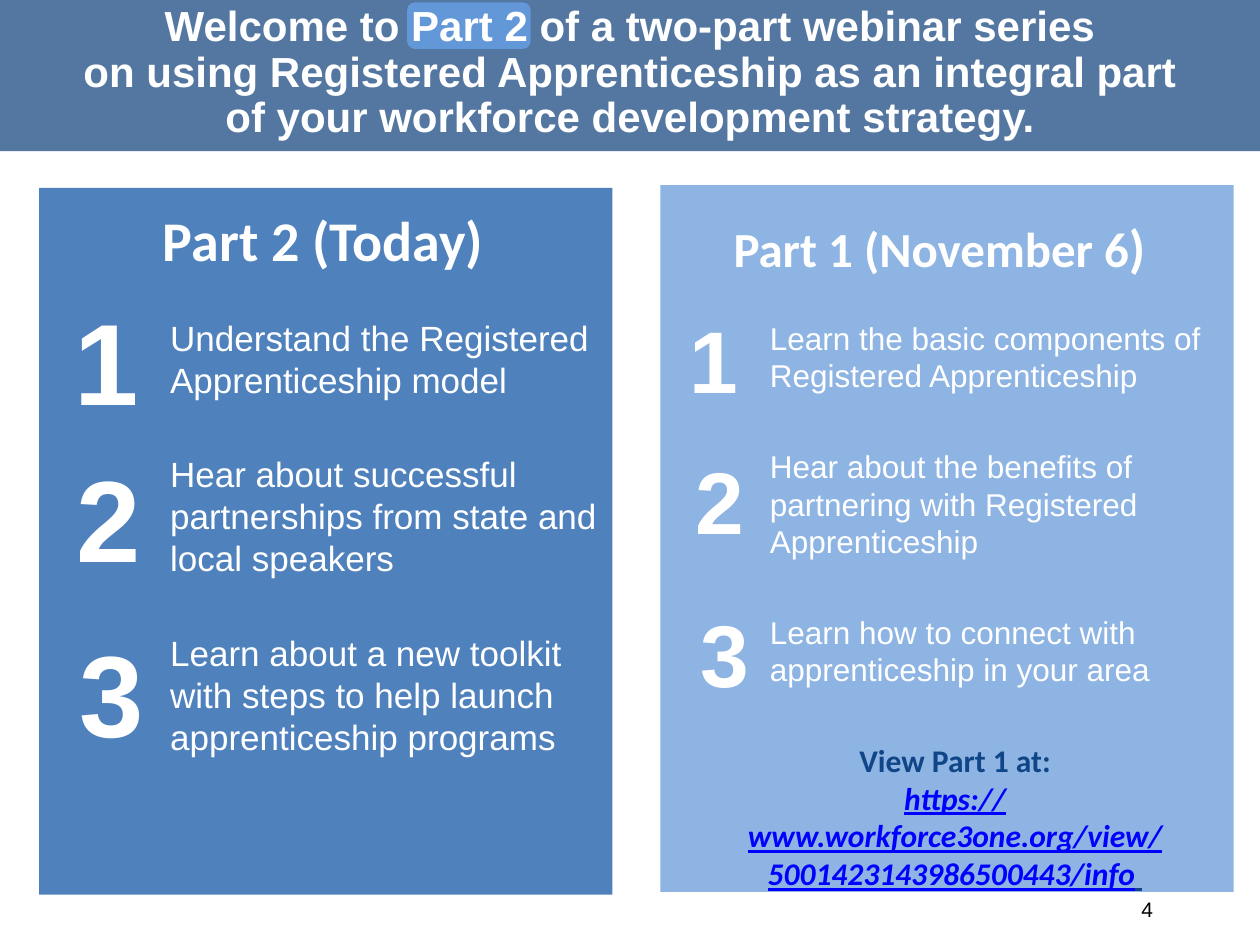
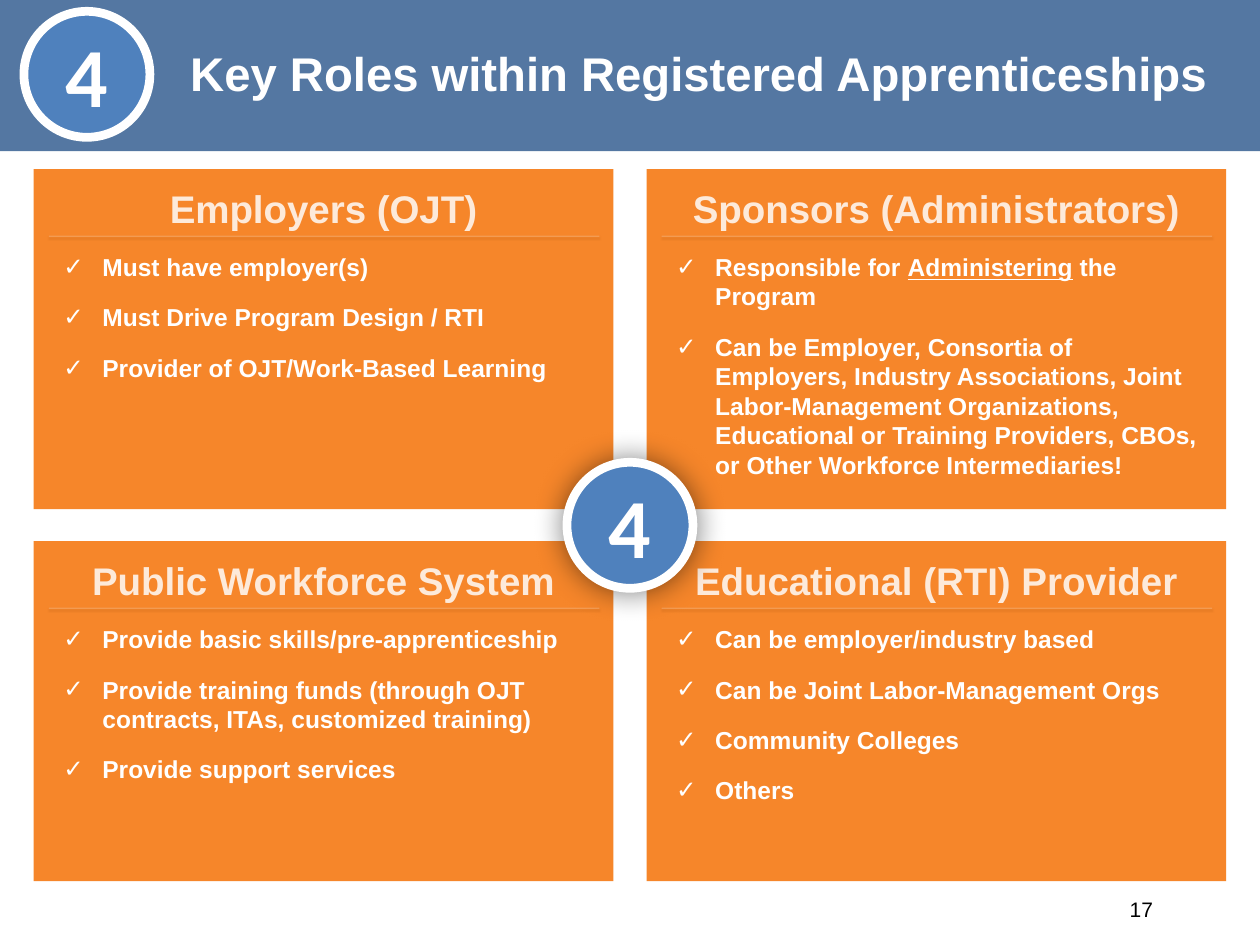
from lxml.etree import SubElement as Sub
from pptx import Presentation
from pptx.dml.color import RGBColor
from pptx.enum.shapes import MSO_CONNECTOR as Link, MSO_SHAPE as Kind
from pptx.enum.text import MSO_ANCHOR as Anchor, MSO_AUTO_SIZE as Auto, PP_ALIGN as Align
from pptx.oxml.ns import qn
from pptx.util import Pt

HUES = {
    "band": "376092", "blue": "4F81BD", "pale": "8EB4E3", "glow": "6297D8",
    "orange": "F6862A", "cream": "FDEADA", "brown": "984807", "navy": "104587",
    "link": "0000FF", "white": "FFFFFF", "black": "000000",
}

PARTS = [
    {"box": (22.3, 107.3, 327.6, 403.9), "hue": "blue", "name": "Part 2 (Today)",
     "head": (-1.4, 6.5, 32), "list": (67.7, 69.8, 20), "size": 66,
     "spots": [(13, 54.7), (14.4, 144.7), (15.8, 244.8)],
     "goals": ["Understand the Registered Apprenticeship model",
               "Hear about successful partnerships from state and local speakers",
               "Learn about a new toolkit with steps to help launch apprenticeship programs"]},
    {"box": (377.3, 105.8, 327.6, 403.9), "hue": "pale", "name": "Part 1 (November 6)",
     "head": (-4.3, 13.7, 28), "list": (55.4, 72.7, 18), "size": 50,
     "spots": [(9.4, 65.5), (13, 146.2), (15.8, 233.3)],
     "goals": ["Learn the basic components of Registered Apprenticeship",
               "Hear about the benefits of partnering with Registered Apprenticeship",
               "Learn how to connect with apprenticeship in your area"]},
]

ROLES = [
    ("Employers (OJT)", ["Must have employer(s)", "Must Drive Program Design / RTI",
                         "Provider of OJT/Work-Based Learning"]),
    ("Sponsors (Administrators)", [
        "Responsible for |Administering| the Program",
        "Can be Employer, Consortia of Employers, Industry Associations, Joint "
        "Labor-Management Organizations, Educational or Training Providers, CBOs, "
        "or Other Workforce Intermediaries!"]),
    ("Public Workforce System", [
        "Provide basic skills/pre-apprenticeship",
        "Provide training funds (through OJT contracts, ITAs, customized training)",
        "Provide support services"]),
    ("Educational (RTI) Provider", ["Can be employer/industry based",
                                    "Can be Joint Labor-Management Orgs",
                                    "Community Colleges", "Others"]),
]


def rgb(hue):
    """Turn a colour name into a colour."""
    return RGBColor.from_string(HUES[hue])


def fade(shape, share):
    """Make the first colour of a shape partly opaque."""
    tint = shape.element.spPr.find(".//" + qn("a:srgbClr"))
    Sub(tint, qn("a:alpha"), val=str(share * 1000))


def shade(shape, hue=None, alpha=100, blur=0, dist=0, angle=0):
    """Give a shape its own shadow, or none at all."""
    for old in shape.element.spPr.findall(qn("a:effectLst")):
        shape.element.spPr.remove(old)
    effect = Sub(shape.element.spPr, qn("a:effectLst"))
    if hue:
        cast = Sub(effect, qn("a:outerShdw"), blurRad=str(Pt(blur)), dist=str(Pt(dist)),
                   dir=str(angle * 60000), algn="ctr", rotWithShape="0")
        tint = Sub(cast, qn("a:srgbClr"), val=HUES[hue])
        Sub(tint, qn("a:alpha"), val=str(alpha * 1000))


def style(par, size, hue, bold=False, face="Arial", align=Align.LEFT, after=0):
    """Format a paragraph and its runs."""
    par.alignment, par.line_spacing = align, 1.0
    par.space_before, par.space_after = Pt(0), Pt(after)
    for run in par.runs:
        font = run.font
        font.name, font.size, font.bold = face, Pt(size), bold
        font.color.rgb = rgb(hue)


def mark(par, sign=None, left=0, hang=0):
    """Set the bullet and indent of a paragraph."""
    props = par._p.get_or_add_pPr()
    props.set("marL", str(Pt(left)))
    props.set("indent", str(-Pt(hang)))
    if sign:
        Sub(props, qn("a:buChar"), char=sign)
    else:
        Sub(props, qn("a:buNone"))


def place(slide, holder, box):
    """Move a placeholder to a box and to the front."""
    holder.left, holder.top, holder.width, holder.height = map(Pt, box)
    slide.shapes.element.append(holder.element)
    frame = holder.text_frame
    frame.auto_size, frame.word_wrap = Auto.NONE, True
    frame.vertical_anchor = Anchor.TOP
    return frame


def block(slide, kind, box, hue):
    """Draw a filled shape without outline or shadow."""
    shape = slide.shapes.add_shape(kind, *map(Pt, box))
    shape.shadow.inherit = False
    shape.fill.solid()
    shape.fill.fore_color.rgb = rgb(hue)
    shape.line.fill.background()
    return shape


def label(slide, box, text, *look, wrap=True, **more):
    """Write one line of text in a box of its own."""
    frame = slide.shapes.add_textbox(*map(Pt, box)).text_frame
    frame.word_wrap = wrap
    frame.text = text
    style(frame.paragraphs[0], *look, **more)
    return frame


def banner(deck, slide):
    """Put the title band on the slide master."""
    band = block(slide, Kind.RECTANGLE, (0, 0, 720, 86.4), "band")
    fade(band, 85)
    band.element.nvSpPr.cNvPr.set("id", "90")
    deck.slide_master.shapes.element.insert(2, band.element)


def title(slide, box, text, size, pitch=1.0):
    """Fill the title placeholder."""
    frame = place(slide, slide.shapes.title, box)
    frame.vertical_anchor = Anchor.MIDDLE
    frame.text = text
    par = frame.paragraphs[0]
    style(par, size, "white", True, align=Align.CENTER)
    par.line_spacing = pitch


def folio(slide, number):
    """Write the slide number."""
    frame = label(slide, (498.2, 505.4, 167.8, 28.8), str(number), 12, "black",
                  align=Align.RIGHT)
    frame.vertical_anchor = Anchor.MIDDLE


def badge(slide, left, top):
    """Draw the ringed number four."""
    ring = block(slide, Kind.OVAL, (left, top, 72, 72), "blue")
    ring.line.color.rgb = rgb("white")
    ring.line.width = Pt(5)
    frame = ring.text_frame
    frame.vertical_anchor = Anchor.MIDDLE
    frame.text = "4"
    style(frame.paragraphs[0], 48, "white", True, "Calibri", Align.CENTER)
    return ring


def part(slide, holder, data):
    """Draw one webinar part with its numbered goals."""
    left, top, width, _ = data["box"]
    block(slide, Kind.RECTANGLE, data["box"], data["hue"])
    dx, dy, size = data["head"]
    head = label(slide, (left + dx, top + dy, width, 46), data["name"], size, "white",
                 True, "Calibri", Align.CENTER)
    dx, dy, size = data["list"]
    frame = place(slide, holder, (left + dx, top + dy, 275.8, 262))
    frame.text = "\n".join(data["goals"])
    for par in frame.paragraphs:
        mark(par)
        style(par, size, "white", after=30)
    size = data["size"]
    for count, (dx, dy) in enumerate(data["spots"], 1):
        label(slide, (left + dx, top + dy, size * 0.57 + 14.4, size * 1.32), str(count),
              size, "white", True, wrap=False)
    return head


def replay(slide, box):
    """Write where the first part can be seen."""
    frame = label(slide, box, "View Part 1 at:", 18, "navy", True, "Calibri", Align.CENTER)
    par = frame.add_paragraph()
    par.text = "https://www.workforce3one.org/view/5001423143986500443/info"
    par.add_run().text = " "
    style(par, 18, "navy", True, "Calibri", Align.CENTER)
    for run in par.runs:
        run.font.italic = run.font.underline = True
    par.runs[0].font.color.rgb = rgb("link")


def role(slide, holder, box, name, duties):
    """Draw one role card with its checked list."""
    left, top, width, _ = box
    block(slide, Kind.RECTANGLE, box, "orange")
    frame = place(slide, holder, (left + 6.8, top + 7.6, 317.5, 179.3))
    frame.margin_left = frame.margin_right = Pt(3.6)
    frame.margin_top = frame.margin_bottom = Pt(1.44)
    frame.text = name
    head = frame.paragraphs[0]
    mark(head)
    style(head, 22, "cream", True, align=Align.CENTER, after=12)
    for duty in duties:
        par = frame.add_paragraph()
        mark(par, "✓", 28.8, 22.3)
        for turn, piece in enumerate(duty.split("|")):
            run = par.add_run()
            run.text = piece
            run.font.underline = turn == 1
        style(par, 14, "white", True, after=12)
    level = Pt(top + 38.4)
    rule = slide.shapes.add_connector(Link.STRAIGHT, Pt(left + 8.6), level,
                                      Pt(left + width - 8), level)
    rule.line.color.rgb = rgb("cream")
    rule.line.width = Pt(0.75)
    fade(rule, 23)
    shade(rule, "brown", 100, 1, 1, 90)


def series(deck):
    """Build the slide on the two webinar parts."""
    slide = deck.slides.add_slide(deck.slide_layouts[3])
    banner(deck, slide)
    block(slide, Kind.ROUNDED_RECTANGLE, (232.6, 1.4, 70.6, 26.6), "glow")
    title(slide, (0, 0, 720, 84.2),
          "Welcome to Part 2 of a two-part webinar series\v"
          "on using Registered Apprenticeship as an integral part\v"
          "of your workforce development strategy.", 24, 0.9)
    folio(slide, 4)
    for spot, data in enumerate(PARTS, 1):
        head = part(slide, slide.placeholders[spot], data)
    line = head.paragraphs[0]
    line.text = line.text[:-1]
    line.add_run().text = ")"
    style(line, 28, "white", True, "Calibri", Align.CENTER)
    line.runs[1].font.size = Pt(30)
    replay(slide, (409.7, 419.8, 272.2, 72.7))


def roles(deck):
    """Build the slide on the four key roles."""
    slide = deck.slides.add_slide(deck.slide_layouts[4])
    title(slide, (93.6, 10.8, 611.3, 61.2), "Key Roles within Registered Apprenticeships", 27)
    badge(slide, 13.7, 6.5)
    folio(slide, 17)
    for spot, (name, duties) in enumerate(ROLES):
        row, col = divmod(spot, 2)
        box = (19.3 + 350.2 * col, 96.6 + 212.6 * row, 331.2, 194.4)
        role(slide, slide.placeholders[spot + 1], box, name, duties)
    shade(badge(slide, 324, 264.2), "black", 50, 17)


def main():
    """Build and save the deck."""
    deck = Presentation()
    deck.slide_width, deck.slide_height = Pt(720), Pt(540)
    series(deck)
    roles(deck)
    deck.save("out.pptx")


if __name__ == "__main__":
    main()
